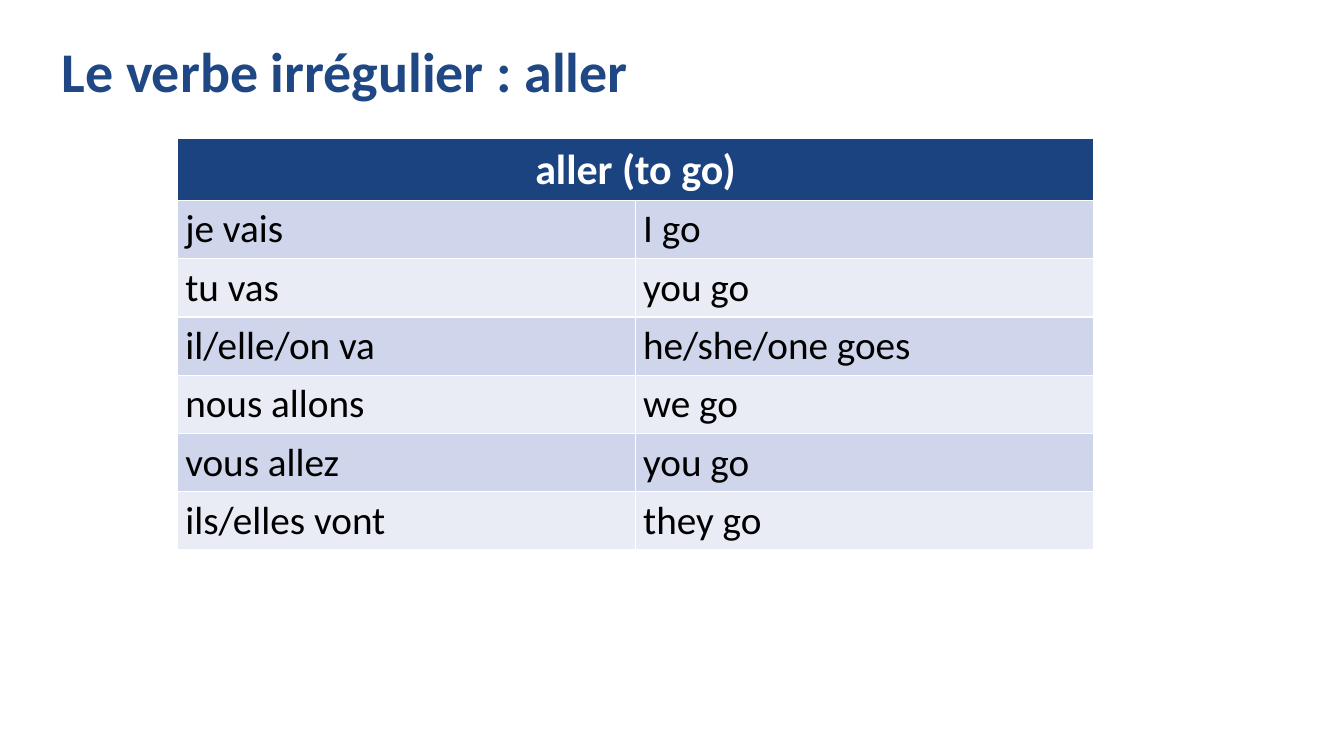
from pptx import Presentation
from pptx.dml.color import RGBColor as RGB
from pptx.enum.text import MSO_ANCHOR as ANCHOR, PP_ALIGN as ALIGN
from pptx.util import Cm, Pt

COLORS = {
    "title": "1E4783",
    "header": "1A437F",
    "band_dark": "CFD5EA",
    "band_light": "E9EBF5",
    "white": "FFFFFF",
    "black": "000000",
}
TITLE_FONT = {"name": "Calibri", "size": Pt(40), "bold": True}
HEADER_FONT = {"name": "Calibri", "size": Pt(30), "bold": True}
BODY_FONT = {"name": "Calibri", "size": Pt(28), "bold": False}
MARGINS = {
    "margin_left": Cm(0.19),
    "margin_right": Cm(0.19),
    "margin_top": Cm(0.13),
    "margin_bottom": Cm(0.13),
}
CONJUGATION = [
    ("je vais", "I go"),
    ("tu vas", "you go"),
    ("il/elle/on va", "he/she/one goes"),
    ("nous allons", "we go"),
    ("vous allez", "you go"),
    ("ils/elles vont", "they go"),
]


def set_attrs(obj, values):
    for name, value in values.items():
        setattr(obj, name, value)


def write(tf, text, font, color, align=ALIGN.LEFT):
    p = tf.paragraphs[0]
    p.alignment = align
    r = p.add_run()
    r.text = text
    set_attrs(r.font, font)
    r.font.color.rgb = RGB.from_string(COLORS[color])
    return p


def add_title(s, text):
    sp = s.shapes.title
    set_attrs(sp, {"left": Cm(1.3), "top": Cm(1.02), "width": Cm(29.21), "height": Cm(1.73)})
    sp.text_frame.vertical_anchor = ANCHOR.MIDDLE
    p = write(sp.text_frame, text, TITLE_FONT, "title")
    p.line_spacing = 0.9


def fill_cell(cell, text, fill, font, color, align=ALIGN.LEFT):
    set_attrs(cell, MARGINS)
    cell.fill.solid()
    cell.fill.fore_color.rgb = RGB.from_string(COLORS[fill])
    write(cell.text_frame, text, font, color, align)


def add_verb_table(s, heading, rows):
    header_height, row_height = Cm(1.54), Cm(1.46)
    height = header_height + row_height * len(rows)
    table = s.shapes.add_table(len(rows) + 1, 2, Cm(4.48), Cm(3.5), Cm(23.08), height).table
    for row in table.rows:
        row.height = row_height
    table.rows[0].height = header_height

    header = table.cell(0, 0)
    header.merge(table.cell(0, 1))
    header.vertical_anchor = ANCHOR.MIDDLE
    fill_cell(header, heading, "header", HEADER_FONT, "white", ALIGN.CENTER)

    for i, row in enumerate(rows, 1):
        band = "band_dark" if i % 2 else "band_light"
        for j, text in enumerate(row):
            fill_cell(table.cell(i, j), text, band, BODY_FONT, "black")


def main():
    prs = Presentation()
    set_attrs(prs, {"slide_width": Cm(33.87), "slide_height": Cm(19.05)})
    s = prs.slides.add_slide(prs.slide_layouts[5])
    add_title(s, "Le verbe irrégulier : aller")
    add_verb_table(s, "aller (to go)", CONJUGATION)
    prs.save("out.pptx")


if __name__ == "__main__":
    main()
